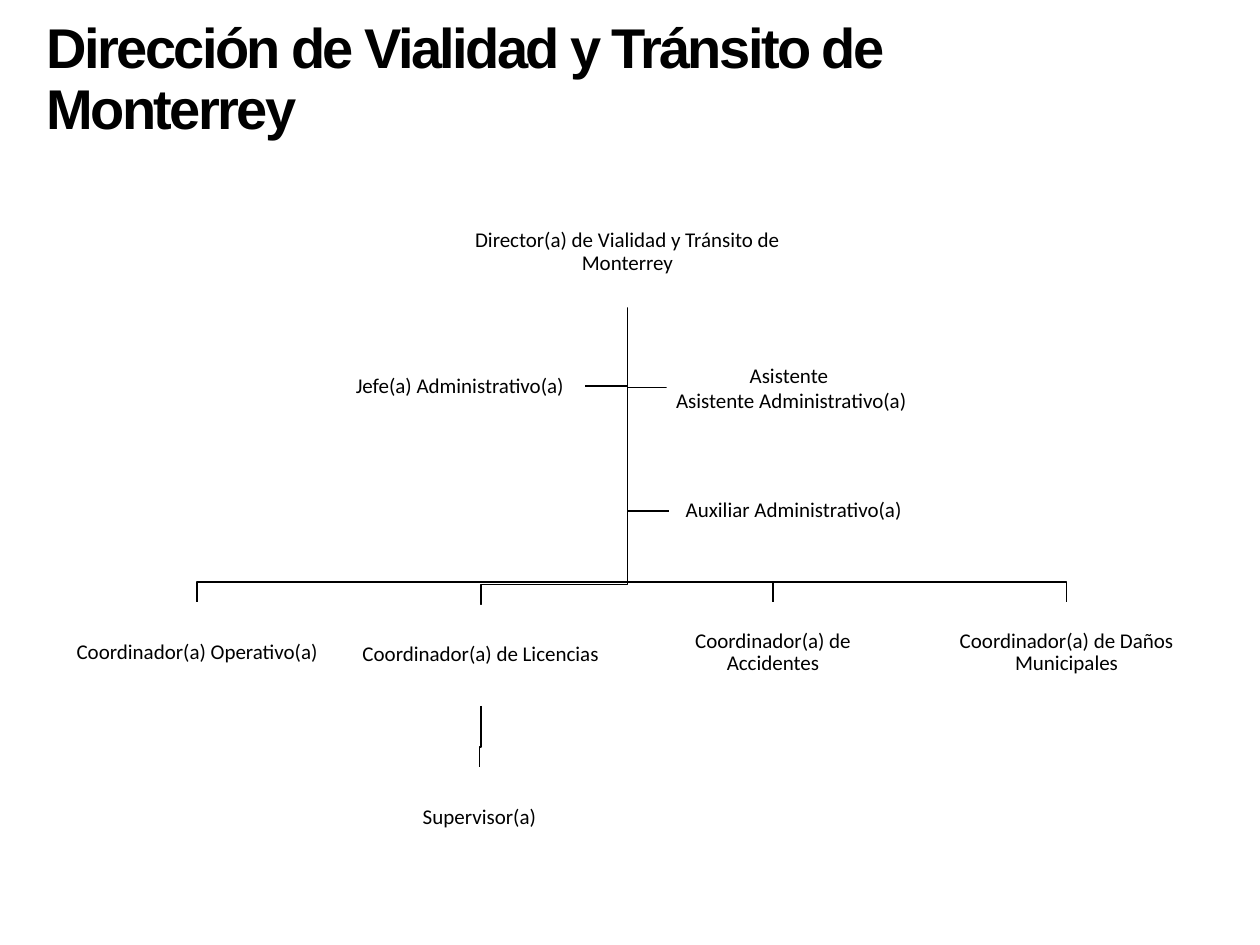
from pptx import Presentation
from pptx.dml.color import RGBColor
from pptx.enum.shapes import MSO_SHAPE
from pptx.enum.text import MSO_ANCHOR, PP_ALIGN
from pptx.util import Inches, Pt

TITLE = "Dirección de Vialidad y Tránsito de Monterrey"
TITLE_AT = (0.27, 0.11, 7.46, 1.07)
BLACK, WHITE = "000000", "FFFFFF"
TITLE_FONT = {"name": "Arial", "size": Pt(32), "bold": True}
BOX_FONT = {"name": "Calibri", "size": Pt(12)}
BOX_W, BOX_H = 1.99, 0.8
DROP = 0.16
STAFF_W, STAFF_H = 1.98, 0.79

BOXES = {
    "director": (["Director(a) de Vialidad y Tránsito de Monterrey"], (3.65, 1.56, 2.66, 0.88), 0.9),
    "operativo": (["Coordinador(a) Operativo(a)"], (0.57, 4.78, BOX_W, BOX_H), 0.9),
    "licencias": (["Coordinador(a) de Licencias"], (2.82, 4.8, BOX_W, BOX_H), 0.9),
    "accidentes": (["Coordinador(a) de", "Accidentes"], (5.14, 4.78, BOX_W, BOX_H), 0.9),
    "daños": (["Coordinador(a) de Daños Municipales"], (7.47, 4.78, BOX_W, BOX_H), 0.9),
    "supervisor": (["Supervisor(a)"], (2.81, 6.09, BOX_W, BOX_H), 0.9),
    "jefe": (["Jefe(a) Administrativo(a)"], (2.66, 2.67, STAFF_W, STAFF_H), 0.9),
    "asistente": (["Asistente ", "Asistente Administrativo(a)"], (5.29, 2.68, STAFF_W, STAFF_H), 1.0),
    "auxiliar": (["Auxiliar Administrativo(a)"], (5.31, 3.66, STAFF_W, STAFF_H), 0.9),
}
LINKS = [
    ("director", "auxiliar", "left"),
    ("director", "asistente", "left"),
    ("director", "jefe", "right"),
    ("director", "daños", "top"),
    ("director", "accidentes", "top"),
    ("licencias", "supervisor", "top"),
    ("director", "licencias", "top"),
    ("director", "operativo", "top"),
]


def rgb(color):
    return RGBColor.from_string(color)


def write(tf, lines, font, align, spacing):
    tf.word_wrap = True
    for i, line in enumerate(lines):
        p = tf.paragraphs[0] if i == 0 else tf.add_paragraph()
        p.alignment, p.line_spacing = align, spacing
        r = p.add_run()
        r.text = line
        for key, value in font.items():
            setattr(r.font, key, value)
        r.font.color.rgb = rgb(BLACK)


def route(parent, child, side):
    px, py, pw, ph = BOXES[parent][1]
    x, y, w, h = BOXES[child][1]
    trunk, mid = px + pw / 2, x + w / 2
    start = (trunk, py + ph)
    if side == "top":
        return [start, (trunk, y - DROP), (mid, y - DROP), (mid, y)]
    edge = x if side == "left" else x + w
    return [start, (trunk, y + h / 2), (edge, y + h / 2)]


def add_link(s, points):
    start, *rest = [(Inches(x), Inches(y)) for x, y in points]
    builder = s.shapes.build_freeform(*start)
    builder.add_line_segments(rest, close=False)
    sp = builder.convert_to_shape()
    sp.shadow.inherit = False
    sp.fill.background()
    sp.line.color.rgb = rgb(BLACK)
    sp.line.width = Pt(1)


def add_box(s, lines, at, spacing):
    sp = s.shapes.add_shape(MSO_SHAPE.RECTANGLE, *map(Inches, at))
    sp.shadow.inherit = False
    sp.fill.solid()
    sp.fill.fore_color.rgb = rgb(WHITE)
    sp.line.fill.background()
    tf = sp.text_frame
    tf.vertical_anchor = MSO_ANCHOR.MIDDLE
    for side in ("left", "top", "right", "bottom"):
        setattr(tf, f"margin_{side}", Inches(0.01))
    write(tf, lines, BOX_FONT, PP_ALIGN.CENTER, spacing)


def main():
    prs = Presentation()
    prs.slide_width, prs.slide_height = Inches(10), Inches(7.5)
    s = prs.slides.add_slide(prs.slide_layouts[5])
    title = s.shapes.title
    title.left, title.top, title.width, title.height = map(Inches, TITLE_AT)
    tf = title.text_frame
    tf.vertical_anchor = MSO_ANCHOR.TOP
    write(tf, [TITLE], TITLE_FONT, PP_ALIGN.LEFT, 0.9)
    tf.paragraphs[0].runs[0].font._element.set("spc", "-150")
    for link in LINKS:
        add_link(s, route(*link))
    for lines, at, spacing in BOXES.values():
        add_box(s, lines, at, spacing)
    prs.save("out.pptx")


if __name__ == "__main__":
    main()
